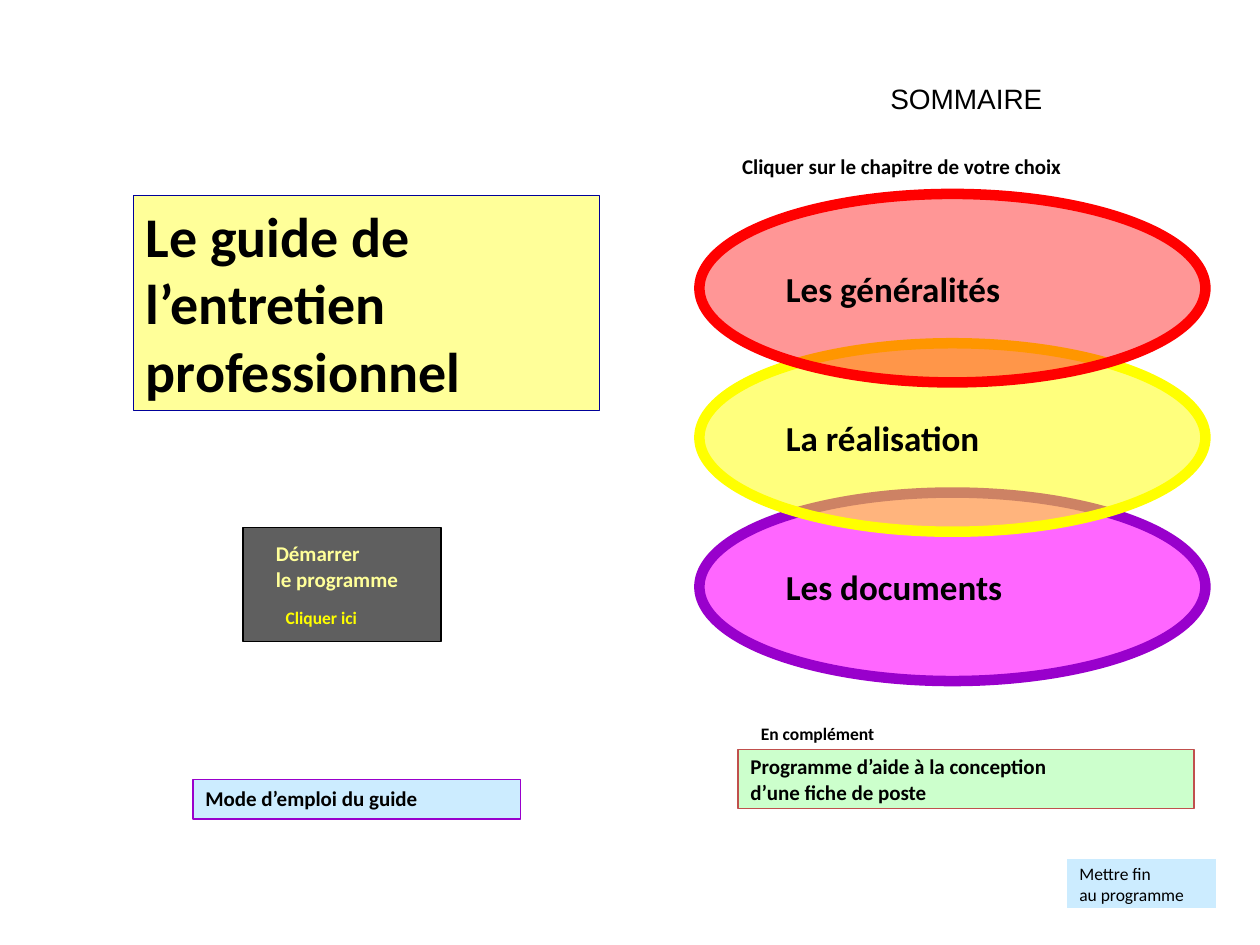
from dataclasses import dataclass
from typing import Optional

from lxml.etree import SubElement
from pptx import Presentation
from pptx.dml.color import RGBColor
from pptx.enum.shapes import MSO_SHAPE as Geo
from pptx.enum.text import MSO_ANCHOR as Anchor, MSO_AUTO_SIZE as Auto, PP_ALIGN as Align
from pptx.oxml.ns import qn
from pptx.util import Cm, Pt

BLACK = RGBColor(0x00, 0x00, 0x00)
GREY = RGBColor(0x5F, 0x5F, 0x5F)
RED = RGBColor(0xFF, 0x00, 0x00)
YELLOW = RGBColor(0xFF, 0xFF, 0x00)
PALE_YELLOW = RGBColor(0xFF, 0xFF, 0x99)
MAGENTA = RGBColor(0xFF, 0x00, 0xFF)
PURPLE = RGBColor(0x99, 0x00, 0xCC)
NAVY = RGBColor(0x00, 0x00, 0x99)
PALE_BLUE = RGBColor(0xCC, 0xEC, 0xFF)
PALE_GREEN = RGBColor(0xCC, 0xFF, 0xCC)
BRICK = RGBColor(0xC0, 0x50, 0x4D)


@dataclass(frozen=True)
class Label:
    text: str
    size: float = 12
    color: RGBColor = BLACK
    bold: bool = True
    font: str = "Calibri"
    anchor: Anchor = Anchor.TOP
    wrap: bool = True
    grow: bool = False


@dataclass(frozen=True)
class Box:
    """Position and size in centimetres; no fill means a plain text box."""
    left: float
    top: float
    width: float
    height: float
    label: Optional[Label] = None
    fill: Optional[RGBColor] = None
    line: Optional[RGBColor] = None
    line_width: float = 0.75
    opacity: int = 100
    geo: Geo = Geo.RECTANGLE


@dataclass(frozen=True)
class Chapter:
    title: str
    fill: RGBColor
    line: RGBColor
    opacity: int


CHAPTERS = [
    Chapter("Les généralités", RED, RED, 41),
    Chapter("La réalisation", YELLOW, YELLOW, 51),
    Chapter("Les documents", MAGENTA, PURPLE, 60),
]
CHAPTER_TOP, CHAPTER_STEP = 3.91, 3.01

BOXES = [
    Box(17.7, 1.52, 2.97, 0.64,
        Label("SOMMAIRE", 16, bold=False, font="Arial", wrap=False)),
    Box(14.71, 2.97, 8.81, 0.76,
        Label("Cliquer sur le chapitre de votre choix", grow=True)),
    Box(3.89, 15.72, 6.6, 0.79,
        Label("Mode d’emploi du guide", grow=True), PALE_BLUE, PURPLE),
    Box(14.88, 15.11, 9.19, 1.19,
        Label("Programme d’aide à la conception\nd’une fiche de poste",
              anchor=Anchor.MIDDLE, wrap=False), PALE_GREEN, BRICK),
    Box(21.51, 17.32, 3, 0.99,
        Label("Mettre fin\nau programme", 10, bold=False, anchor=Anchor.MIDDLE, wrap=False),
        PALE_BLUE, geo=Geo.ACTION_BUTTON_CUSTOM),
    Box(15.09, 14.45, 8.81, 0.69, Label("En complément", 10, grow=True)),
    Box(2.69, 3.94, 9.4, 4.34,
        Label("Le guide de\nl’entretien professionnel", 32, grow=True), PALE_YELLOW, NAVY),
]

START_BUTTON = [
    Box(4.9, 10.64, 3.99, 2.29, fill=GREY, line=BLACK),
    Box(5.31, 10.87, 5, 1.09,
        Label("Démarrer\nle programme", color=PALE_YELLOW, anchor=Anchor.MIDDLE, wrap=False)),
]
START_HINT = Box(5.51, 12.12, 3.2, 0.69, Label("Cliquer ici", 10, YELLOW, grow=True))


def write(sp, label: Label) -> None:
    tf = sp.text_frame
    tf.text = label.text
    tf.word_wrap = label.wrap
    tf.vertical_anchor = label.anchor
    tf.auto_size = Auto.SHAPE_TO_FIT_TEXT if label.grow else Auto.NONE
    for p in tf.paragraphs:
        p.alignment = Align.LEFT
        for r in p.runs:
            r.font.name = label.font
            r.font.size = Pt(label.size)
            r.font.bold = label.bold
            r.font.color.rgb = label.color


def draw(shapes, box: Box) -> None:
    place = [Cm(v) for v in (box.left, box.top, box.width, box.height)]
    if box.fill is None:
        sp = shapes.add_textbox(*place)
    else:
        sp = shapes.add_shape(box.geo, *place)
        sp.shadow.inherit = False
        sp.fill.solid()
        sp.fill.fore_color.rgb = box.fill
        if box.opacity < 100:
            color = sp.fill._xPr.find(qn("a:solidFill"))[0]
            SubElement(color, qn("a:alpha"), val=str(box.opacity * 1000))
        if box.line is None:
            sp.line.fill.background()
        else:
            sp.line.color.rgb = box.line
            sp.line.width = Pt(box.line_width)
    if box.label:
        write(sp, box.label)


def draw_chapters(shapes) -> None:
    """Stack the ellipses from the bottom up, so each overlaps the one below it."""
    for i, chapter in reversed(list(enumerate(CHAPTERS))):
        label = Label(chapter.title, 20, anchor=Anchor.MIDDLE)
        draw(shapes, Box(14.1, CHAPTER_TOP + i * CHAPTER_STEP, 10.2, 3.8, label,
                         chapter.fill, chapter.line, 6, chapter.opacity, Geo.OVAL))


def main() -> None:
    prs = Presentation()
    prs.slide_width, prs.slide_height = Cm(25.4), Cm(19.05)
    s = prs.slides.add_slide(prs.slide_layouts[6])
    draw_chapters(s.shapes)
    for box in BOXES:
        draw(s.shapes, box)
    button = s.shapes.add_group_shape()
    for box in START_BUTTON:
        draw(button.shapes, box)
    draw(s.shapes, START_HINT)
    prs.save("out.pptx")


if __name__ == "__main__":
    main()
